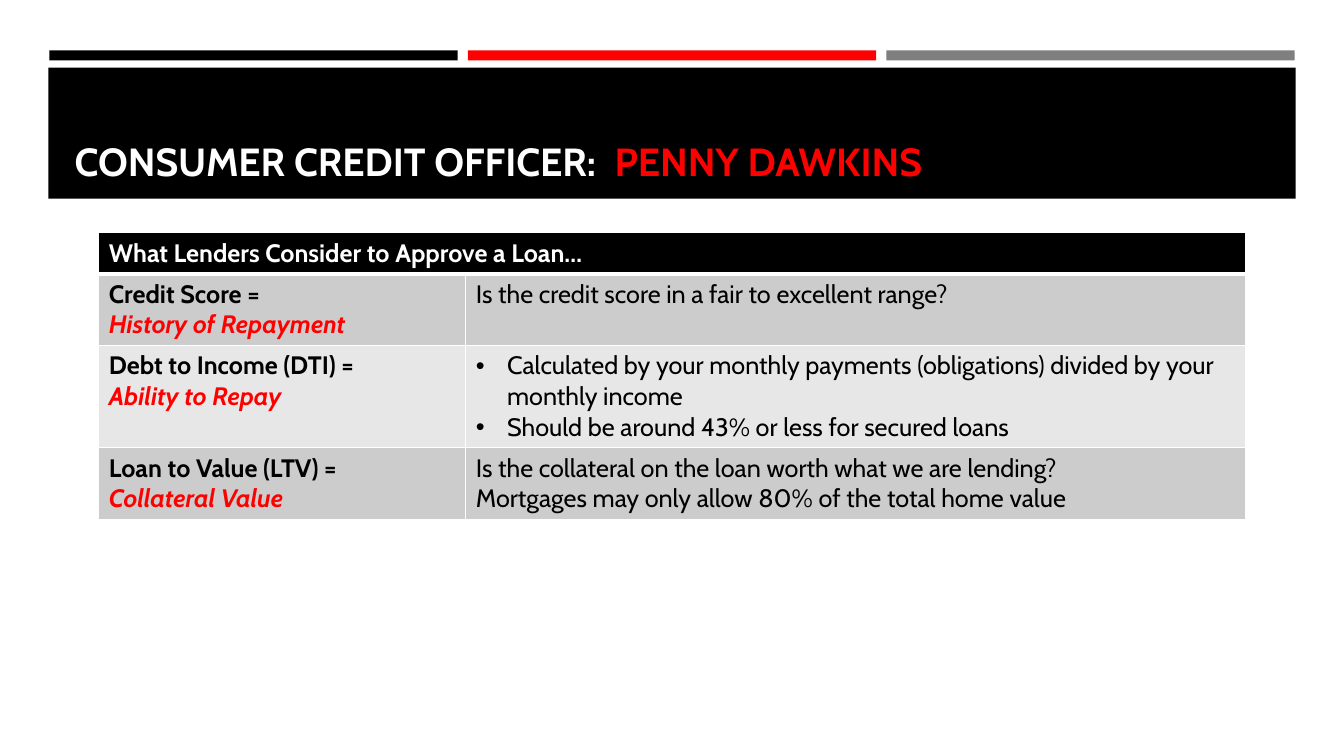
from lxml.etree import SubElement
from pptx import Presentation
from pptx.dml.color import RGBColor
from pptx.enum.shapes import MSO_SHAPE as SHAPE
from pptx.enum.text import MSO_ANCHOR as ANCHOR, MSO_AUTO_SIZE as AUTO_SIZE, PP_ALIGN as ALIGN
from pptx.oxml.ns import qn
from pptx.util import Inches, Pt

FONT = "Cabin"
COLORS = {"black": "000000", "red": "FF0000", "gray": "7F7F7F", "white": "FFFFFF",
          "dark band": "CCCCCC", "light band": "E7E7E7"}

TITLE = [("CONSUMER CREDIT OFFICER:", "white"), (" ", "white"), ("PENNY DAWKINS", "red")]
HEADER = "What Lenders Consider to Approve a Loan…"
# factor, what it shows, explanation lines, bulleted
FACTORS = [
    ("Credit Score =", "History of Repayment",
     ["Is the credit score in a fair to excellent range?"], False),
    ("Debt to Income (DTI) =", "Ability to Repay",
     ["Calculated by your monthly payments (obligations) divided by your monthly income",
      "Should be around 43% or less for secured loans"], True),
    ("Loan to Value (LTV) =", "Collateral Value",
     ["Is the collateral on the loan worth what we are lending?",
      "Mortgages may only allow 80% of the total home value"], False),
]
STRIPES = ["black", "red", "gray"]
STRIPE_LEFT, STRIPE_WIDTH, STRIPE_STEP = 0.49, 4.05, 4.15
COLUMN_WIDTHS = [3.64, 7.73]
ROW_HEIGHTS = [0.39, 0.7, 1.0, 0.7]


def rgb(name):
    return RGBColor.from_string(COLORS[name])


def add_bar(s, left, top, width, height, color):
    sp = s.shapes.add_shape(SHAPE.RECTANGLE, *map(Inches, (left, top, width, height)))
    sp.shadow.inherit = False
    sp.fill.solid()
    sp.fill.fore_color.rgb = rgb(color)
    sp.line.fill.background()


def add_run(p, text, color, size=18, **formats):
    r = p.add_run()
    r.text = text
    r.font.color.rgb = rgb(color)
    for name, value in {"name": FONT, "size": Pt(size), "bold": False, **formats}.items():
        setattr(r.font, name, value)
    return r


def add_bullet(p):
    pPr = p._p.get_or_add_pPr()
    pPr.set("marL", str(Inches(0.31)))
    pPr.set("indent", str(-Inches(0.31)))
    SubElement(pPr, qn("a:buFont"), typeface="Arial")
    SubElement(pPr, qn("a:buChar"), char="•")


def fill_cell(cell, fill, lines, bulleted=False):
    """Fill a cell with lines given as (text, color, font formats)."""
    cell.fill.solid()
    cell.fill.fore_color.rgb = rgb(fill)
    tf = cell.text_frame
    for i, (text, color, formats) in enumerate(lines):
        p = tf.add_paragraph() if i else tf.paragraphs[0]
        if bulleted:
            add_bullet(p)
        add_run(p, text, color, **formats)


def add_borders(cell, top, bottom):
    tcPr = cell._tc.get_or_add_tcPr()
    for i, (side, width) in enumerate(zip("LRTB", (1, 1, top, bottom))):
        ln = tcPr.makeelement(qn(f"a:ln{side}"), {"w": str(Pt(width))})
        SubElement(SubElement(ln, qn("a:solidFill")), qn("a:srgbClr"), val=COLORS["white"])
        tcPr.insert(i, ln)


def add_title(s):
    title = s.shapes.title
    title.left, title.top, title.width, title.height = map(Inches, (0.64, 0.77, 12.06, 1.11))
    s.shapes._spTree.append(title._element)  # in front of the banner
    tf = title.text_frame
    tf.word_wrap, tf.auto_size, tf.vertical_anchor = True, AUTO_SIZE.NONE, ANCHOR.BOTTOM
    p = tf.paragraphs[0]
    p.alignment = ALIGN.LEFT
    for text, color in TITLE:
        r = add_run(p, text, color, size=28, bold=True)
        if text == " ":
            r._r.get_or_add_rPr().set("spc", "700")  # wider gap before the name


def add_factor_table(s):
    size = sum(COLUMN_WIDTHS), sum(ROW_HEIGHTS)
    table = s.shapes.add_table(len(ROW_HEIGHTS), len(COLUMN_WIDTHS),
                               *map(Inches, (0.98, 2.31, *size))).table
    table.horz_banding = False
    for column, width in zip(table.columns, COLUMN_WIDTHS):
        column.width = Inches(width)
    for row, height in zip(table.rows, ROW_HEIGHTS):
        row.height = Inches(height)

    header = table.cell(0, 0)
    header.merge(table.cell(0, 1))
    header.vertical_anchor = ANCHOR.MIDDLE
    fill_cell(header, "black", [(HEADER, "white", {"bold": True})])
    for i, (factor, meaning, details, bulleted) in enumerate(FACTORS, 1):
        band = "dark band" if i % 2 else "light band"
        fill_cell(table.cell(i, 0), band, [(factor, "black", {"bold": True}),
                                           (meaning, "red", {"bold": True, "italic": True})])
        fill_cell(table.cell(i, 1), band, [(line, "black", {}) for line in details], bulleted)

    for i, row in enumerate(table.rows):
        for cell in row.cells:
            add_borders(cell, top=3 if i == 1 else 1, bottom=3 if i == 0 else 1)


def main():
    prs = Presentation()
    prs.slide_width, prs.slide_height = Inches(13.33), Inches(7.5)
    s = prs.slides.add_slide(prs.slide_layouts[5])
    for i, color in enumerate(STRIPES):
        add_bar(s, STRIPE_LEFT + i * STRIPE_STEP, 0.5, STRIPE_WIDTH, 0.1, color)
    add_bar(s, 0.48, 0.67, 12.37, 1.3, "black")
    add_title(s)
    add_factor_table(s)
    prs.save("out.pptx")


if __name__ == "__main__":
    main()
